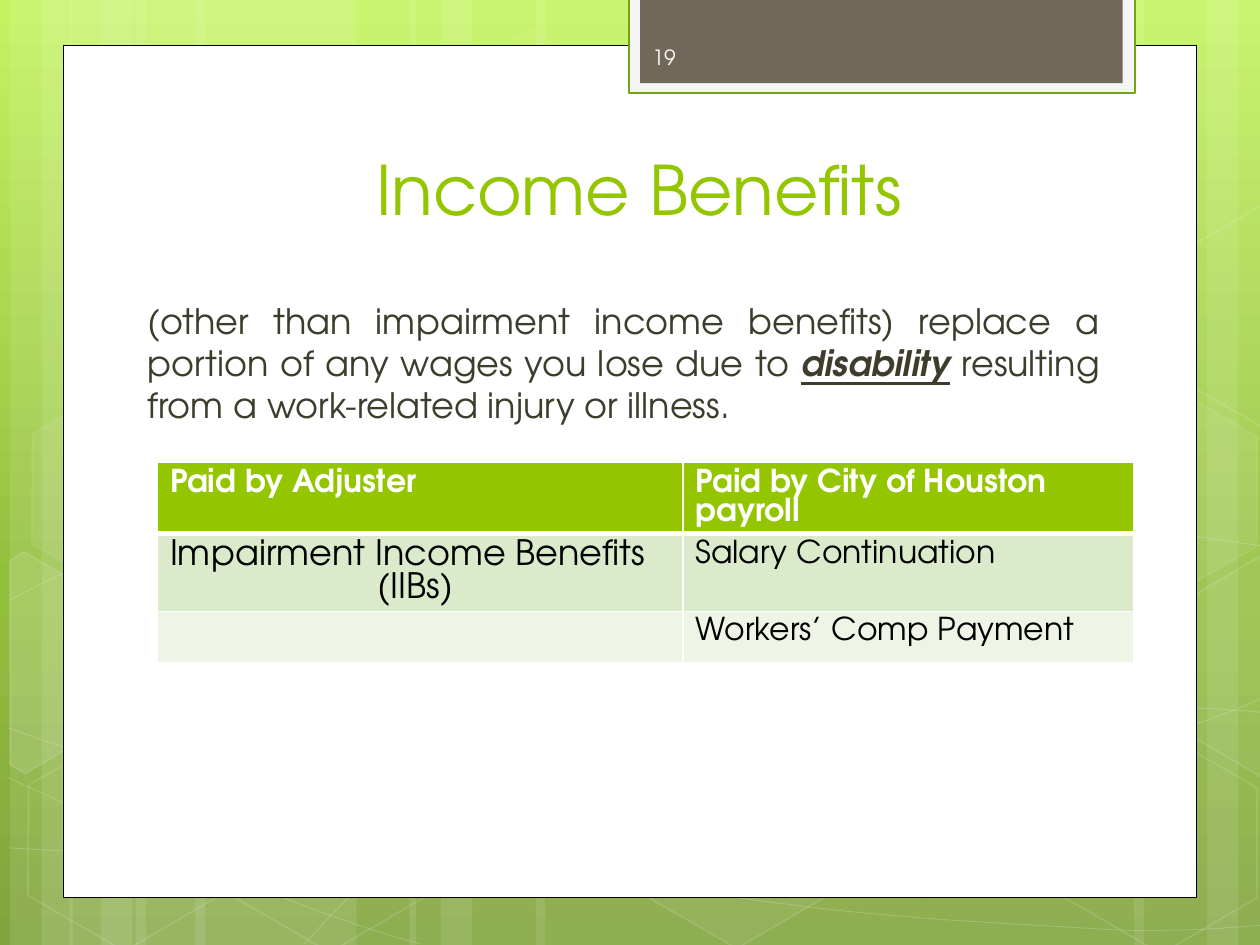
from copy import deepcopy

from lxml import etree
from pptx import Presentation
from pptx.dml.color import RGBColor
from pptx.enum.shapes import MSO_SHAPE
from pptx.enum.text import MSO_ANCHOR, MSO_AUTO_SIZE, PP_ALIGN
from pptx.oxml import parse_xml
from pptx.oxml.ns import nsdecls, qn
from pptx.util import Inches, Pt

FONT = "TeX Gyre Adventor"
WHITE = RGBColor(0xFF, 0xFF, 0xFF)
BLACK = RGBColor(0x00, 0x00, 0x00)
GREEN = RGBColor(0x94, 0xC6, 0x00)
DARK_GREEN = RGBColor(0x74, 0xA5, 0x10)
BROWN = RGBColor(0x71, 0x68, 0x5A)
PALE_GRAY = RGBColor(0xF5, 0xF5, 0xF5)
BODY_INK = RGBColor(0x3E, 0x3D, 0x2D)
NUMBER_INK = RGBColor(0xFE, 0xFE, 0xFE)
ROW_FILLS = [GREEN, RGBColor(0xDC, 0xEA, 0xCC), RGBColor(0xEE, 0xF5, 0xE7)]
BACKDROP = [(0, RGBColor(0xC3, 0xF3, 0x5F)), (0.62, RGBColor(0x93, 0xBF, 0x3F)),
            (1, RGBColor(0x81, 0xA5, 0x3E))]

# left, width
STRIPES = [(1.08, 1.75), (0.08, 0.5), (0.33, 0.83), (1.55, 1.75), (0.55, 0.5), (0.8, 0.83),
           (7.33, 1.75), (9.58, 0.5), (9, 0.83), (4.25, 3.08), (3.25, 0.5), (3.5, 0.83)]
# start point, then Bezier triples
CURVES = [
    [(0.07, 6.73), (0.61, 6.76), (1.15, 6.79), (1.9, 6.78), (2.65, 6.77), (3.58, 6.75),
     (4.58, 6.65), (5.58, 6.55), (7, 6.36), (7.92, 6.17), (8.83, 5.98), (9.77, 5.68),
     (10.07, 5.51)],
    [(0.07, 4.77), (0.36, 4.61), (0.65, 4.46), (1.21, 4.31), (1.78, 4.16), (2.59, 3.94),
     (3.47, 3.87), (4.36, 3.8), (5.44, 3.79), (6.54, 3.87), (7.64, 3.95), (9.47, 4.26),
     (10.07, 4.34)],
    [(0.06, 6.17), (1.27, 6.72), (2.47, 7.27), (3.34, 7.49)],
    [(0.07, 5.78), (0.38, 5.89), (0.7, 6), (1.28, 6.16), (1.86, 6.31), (2.73, 6.56),
     (3.57, 6.73), (4.4, 6.9), (5.45, 7.08), (6.28, 7.18), (7.11, 7.29), (8, 7.33),
     (8.53, 7.36), (9.05, 7.4), (9.19, 7.38), (9.45, 7.38), (9.71, 7.37), (9.89, 7.35),
     (10.07, 7.34)],
    [(2.42, 7.49), (2.6, 7.29), (2.78, 7.09), (3.02, 6.91), (3.26, 6.73), (3.6, 6.53),
     (3.88, 6.39), (4.16, 6.25), (4.33, 6.19), (4.7, 6.09), (5.06, 5.99), (5.73, 5.85),
     (6.08, 5.78), (6.44, 5.71), (6.49, 5.71), (6.8, 5.69), (7.11, 5.66), (7.6, 5.63),
     (7.94, 5.62), (8.29, 5.61), (8.86, 5.62), (8.86, 5.62), (9.1, 5.62), (9.3, 5.62),
     (9.53, 5.62), (9.71, 5.63), (9.88, 5.64), (9.97, 5.65), (10.06, 5.66), (10.03, 5.65),
     (10.06, 5.66)],
]
# left, top, fill opacity, line opacity
HEXAGONS = [(3.34, 0.36, 4, 8), (4.97, 5.89, 6, 12), (0.11, 5.91, None, 12),
            (0.14, 3.12, 7, 8), (1.74, 5.92, None, 12), (8.34, 5.93, None, 12),
            (8.34, 3.14, 7, 8)]
# points, fill opacity
CUT_HEXAGONS = [
    ([(0.08, 4.45), (0.19, 4.38), (0.96, 4.82), (0.95, 5.7), (0.2, 6.14), (0.08, 6.07)], 10),
    ([(9.26, 4.85), (10.01, 4.41), (10.09, 4.46), (10.09, 6.13), (10.02, 6.17),
      (9.26, 5.73)], 4),
    ([(9.26, 2.07), (10.01, 1.63), (10.1, 1.68), (10.09, 3.35), (10.02, 3.39),
      (9.26, 2.95)], None),
]


def paint(shape, fill=None, line=None, width=1, fill_alpha=100, line_alpha=100):
    """Set fill and line, with opacity in percent."""
    shape.shadow.inherit = False
    for part, color, alpha, place in ((shape.fill, fill, fill_alpha, "a:solidFill"),
                                      (shape.line.fill, line, line_alpha, "a:ln/a:solidFill")):
        if color is None:
            part.background()
            continue
        part.solid()
        part.fore_color.rgb = color
        if alpha < 100:
            swatch = shape.element.spPr.xpath(f"./{place}/a:srgbClr")[0]
            etree.SubElement(swatch, qn("a:alpha")).set("val", str(alpha * 1000))
    if line is not None:
        shape.line.width = Pt(width)


def add_box(page, box, kind=MSO_SHAPE.RECTANGLE):
    return page.shapes.add_shape(kind, *map(Inches, box))


def add_outline(page, points, close):
    start, *rest = [(Inches(x), Inches(y)) for x, y in points]
    builder = page.shapes.build_freeform(*start)
    builder.add_line_segments(rest, close=close)
    return builder.convert_to_shape()


def add_curve(page, nodes):
    """Draw an outline whose points, three by three, become Bezier segments."""
    curve = add_outline(page, nodes, False)
    outline = curve.element.spPr.xpath(".//a:path")[0]
    for index, segment in enumerate(outline.xpath("./a:lnTo")):
        if index % 3 == 0:
            bezier = etree.SubElement(outline, qn("a:cubicBezTo"))
        bezier.append(segment[0])
        outline.remove(segment)
    return curve


def set_font(font, size, color, bold=False):
    font.name, font.size, font.bold = FONT, Pt(size), bold
    font.color.rgb = color


def fill_background(page):
    fill = page.background.fill
    fill.gradient()
    fill.gradient_angle = 270
    stop_list = page.element.xpath(".//p:bg//a:gsLst")[0]
    stop_list.append(deepcopy(stop_list[-1]))
    for stop, (position, color) in zip(fill.gradient_stops, BACKDROP):
        stop.position = position
        stop.color.rgb = color


def add_decoration(page, height):
    """Stripes, curves and hexagons behind the panel."""
    for left, width in STRIPES:
        paint(add_box(page, (left, 0, width, height)), WHITE, fill_alpha=10)
    for nodes in CURVES:
        paint(add_curve(page, nodes), line=WHITE, width=0.5, line_alpha=20)
    for left, top, fill_alpha, line_alpha in HEXAGONS:
        hexagon = add_box(page, (left, top, 1.75, 1.52), MSO_SHAPE.HEXAGON)
        hexagon.adjustments[0] = 0.285
        hexagon.rotation = 30
        paint(hexagon, WHITE if fill_alpha else None, WHITE,
              fill_alpha=fill_alpha or 100, line_alpha=line_alpha)
    for points, fill_alpha in CUT_HEXAGONS:
        paint(add_outline(page, points, True), WHITE if fill_alpha else None, WHITE,
              fill_alpha=fill_alpha or 100, line_alpha=12)


def add_panel(page, box):
    paint(add_box(page, box), WHITE, BLACK, 0.5)


def add_number_tab(page, box, number):
    left, top, width, height = box
    paint(add_box(page, box), PALE_GRAY, DARK_GREEN, 1.25)
    paint(add_box(page, (left + 0.09, top, width - 0.19, height - 0.08)), BROWN)
    label = page.shapes.add_textbox(*map(Inches, (left + 0.09, top + 0.27, 1.46, 0.4)))
    frame = label.text_frame
    frame.word_wrap = True
    frame.vertical_anchor = MSO_ANCHOR.MIDDLE
    frame.text = number
    set_font(frame.paragraphs[0].font, 12, NUMBER_INK)


def place_text(placeholder, box):
    """Move a placeholder to the box, in front of the shapes so far."""
    placeholder.left, placeholder.top, placeholder.width, placeholder.height = map(Inches, box)
    placeholder.element.getparent().append(placeholder.element)
    frame = placeholder.text_frame
    frame.word_wrap = True
    frame.auto_size = MSO_AUTO_SIZE.NONE
    frame.vertical_anchor = MSO_ANCHOR.TOP
    return frame.paragraphs[0]


def add_title(page, box, text):
    para = place_text(page.shapes.title, box)
    para.text = text
    para.alignment = PP_ALIGN.CENTER
    set_font(para.font, 39, GREEN)


def add_definition(page, box):
    para = place_text(page.placeholders[1], box)
    para.alignment = PP_ALIGN.JUSTIFY
    para.space_before = Pt(4)
    properties = para._p.get_or_add_pPr()
    properties.set("marL", str(Inches(0.07)))
    properties.set("indent", "0")
    etree.SubElement(properties, qn("a:buNone"))
    set_font(para.font, 20, BODY_INK)
    para.add_run().text = ("(other than impairment income benefits) replace a portion "
                           "of any wages you lose due to ")
    span = para.add_run()
    span.text = "disability"
    span.font.bold = span.font.italic = span.font.underline = True
    para.add_run().text = " resulting from a work-related injury or illness. "


def set_borders(cell, is_header):
    properties = cell._tc.get_or_add_tcPr()
    for index, side in enumerate("LRTB"):
        width = Pt(3 if is_header and side == "B" else 1)
        properties.insert(index, parse_xml(
            f'<a:ln{side} {nsdecls("a")} w="{width}"><a:solidFill>'
            f'<a:srgbClr val="{WHITE}"/></a:solidFill></a:ln{side}>'))


def add_payer_table(page, box):
    rows = [["Paid by Adjuster", "Paid by City of Houston\npayroll"],
            ["Impairment Income Benefits\n(IIBs) ", "Salary Continuation"],
            ["", "Workers’ Comp Payment"]]
    table = page.shapes.add_table(3, 2, *map(Inches, box)).table
    for column, width in zip(table.columns, (4.17, 3.58)):
        column.width = Inches(width)
    for row_index, texts in enumerate(rows):
        is_header = row_index == 0
        for column_index, text in enumerate(texts):
            cell = table.cell(row_index, column_index)
            cell.text = text
            cell.fill.solid()
            cell.fill.fore_color.rgb = ROW_FILLS[row_index]
            set_borders(cell, is_header)
            size = 20 if (row_index, column_index) == (1, 0) else 18
            for para in cell.text_frame.paragraphs:
                set_font(para.font, size, WHITE if is_header else BLACK, is_header)
    table.cell(1, 0).text_frame.paragraphs[1].alignment = PP_ALIGN.CENTER


def main():
    deck = Presentation()
    deck.slide_width, deck.slide_height = Inches(10), Inches(7.5)
    page = deck.slides.add_slide(deck.slide_layouts[1])
    fill_background(page)
    add_decoration(page, 7.5)
    add_panel(page, (0.5, 0.36, 9, 6.76))
    add_number_tab(page, (4.99, -0.02, 4.02, 0.76), "19")
    add_title(page, (1.14, 1.12, 7.86, 1.25), "Income Benefits")
    add_definition(page, (1, 2.33, 7.83, 4.17))
    add_payer_table(page, (1.25, 3.67, 7.75, 1.23))
    deck.save("out.pptx")


if __name__ == "__main__":
    main()
